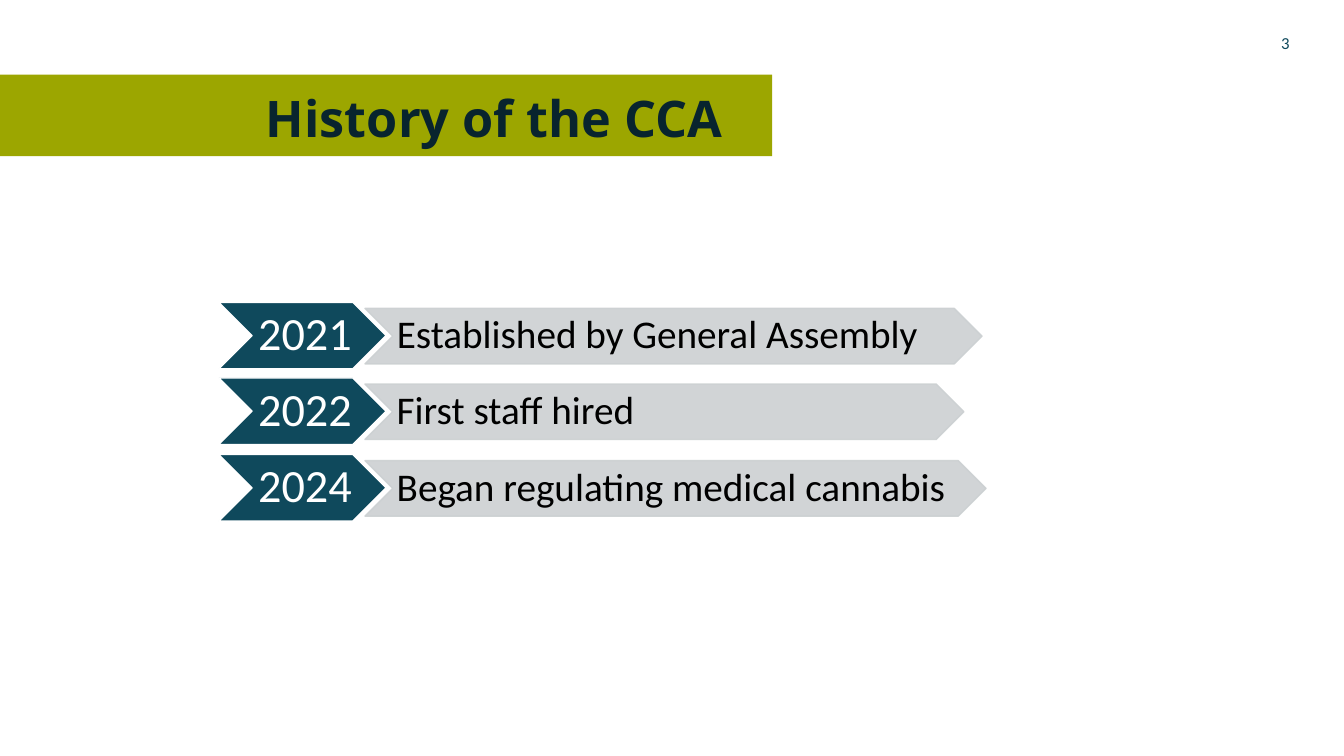
from lxml import etree
from pptx import Presentation
from pptx.dml.color import RGBColor
from pptx.enum.shapes import MSO_SHAPE as SHAPE
from pptx.enum.text import MSO_ANCHOR as ANCHOR, PP_ALIGN as ALIGN
from pptx.oxml.ns import qn
from pptx.util import Pt

PX = 9144
COLORS = {
    "white": "FFFFFF", "olive": "9CA600", "ink": "08242E",
    "teal": "0F495C", "grey": "CCD0D2", "black": "000000",
}
MILESTONES = [
    ("2021", "Established by General Assembly", 612),
    ("2022", "First staff hired", 594),
    ("2024", "Began regulating medical cannabis", 616),
]

deck = Presentation()
deck.slide_width, deck.slide_height = 1333 * PX, 750 * PX
slide = deck.slides.add_slide(deck.slide_layouts[6])


def add_block(kind, left, top, width, height, fill, line=None, opacity=100):
    block = slide.shapes.add_shape(kind, left * PX, top * PX, width * PX, height * PX)
    block.shadow.inherit = False
    block.fill.solid()
    block.fill.fore_color.rgb = RGBColor.from_string(COLORS[fill])
    if line:
        block.line.color.rgb = RGBColor.from_string(COLORS[line])
        block.line.width = Pt(1)
    else:
        block.line.fill.background()
    if opacity < 100:
        for color in block._element.spPr.iter(qn("a:srgbClr")):
            etree.SubElement(color, qn("a:alpha"), val=str(opacity * 1000))
    return block


def write(holder, text, size, color, align, margins, font="Calibri", bold=False, spacing=0.9):
    frame = holder.text_frame
    frame.word_wrap = True
    frame.vertical_anchor = ANCHOR.MIDDLE
    frame.margin_left, frame.margin_top, frame.margin_right, frame.margin_bottom = [
        margin * PX for margin in margins]
    frame.text = text
    line = frame.paragraphs[0]
    line.alignment = align
    line.line_spacing = spacing
    style = line.runs[0].font
    style.name, style.size, style.bold = font, Pt(size), bold
    style.color.rgb = RGBColor.from_string(COLORS[color])


add_block(SHAPE.RECTANGLE, 0, 74, 766, 81, "olive")
title = slide.shapes.add_textbox(254 * PX, 97 * PX, 664 * PX, 47 * PX)
write(title, "History of the CCA", 36, "ink", ALIGN.LEFT, (10, 5, 10, 5), "Open Sans", True)

page_number = add_block(SHAPE.RECTANGLE, 1174, 22, 115, 40, "white")
write(page_number, "3", 12, "teal", ALIGN.RIGHT, (10, 5, 10, 5), spacing=1.0)

for row, (year, event, event_width) in enumerate(MILESTONES):
    top = 300 + row * 756 // 10
    year_arrow = add_block(SHAPE.CHEVRON, 217, top, 166, 66, "teal", "white")
    write(year_arrow, year, 33, "white", ALIGN.CENTER, (5, 2, 0, 2))
    event_arrow = add_block(SHAPE.CHEVRON, 362, top + 6, event_width, 55, "grey", "grey", 90)
    write(event_arrow, event, 28, "black", ALIGN.LEFT, (4, 2, 0, 2))

deck.save("out.pptx")
